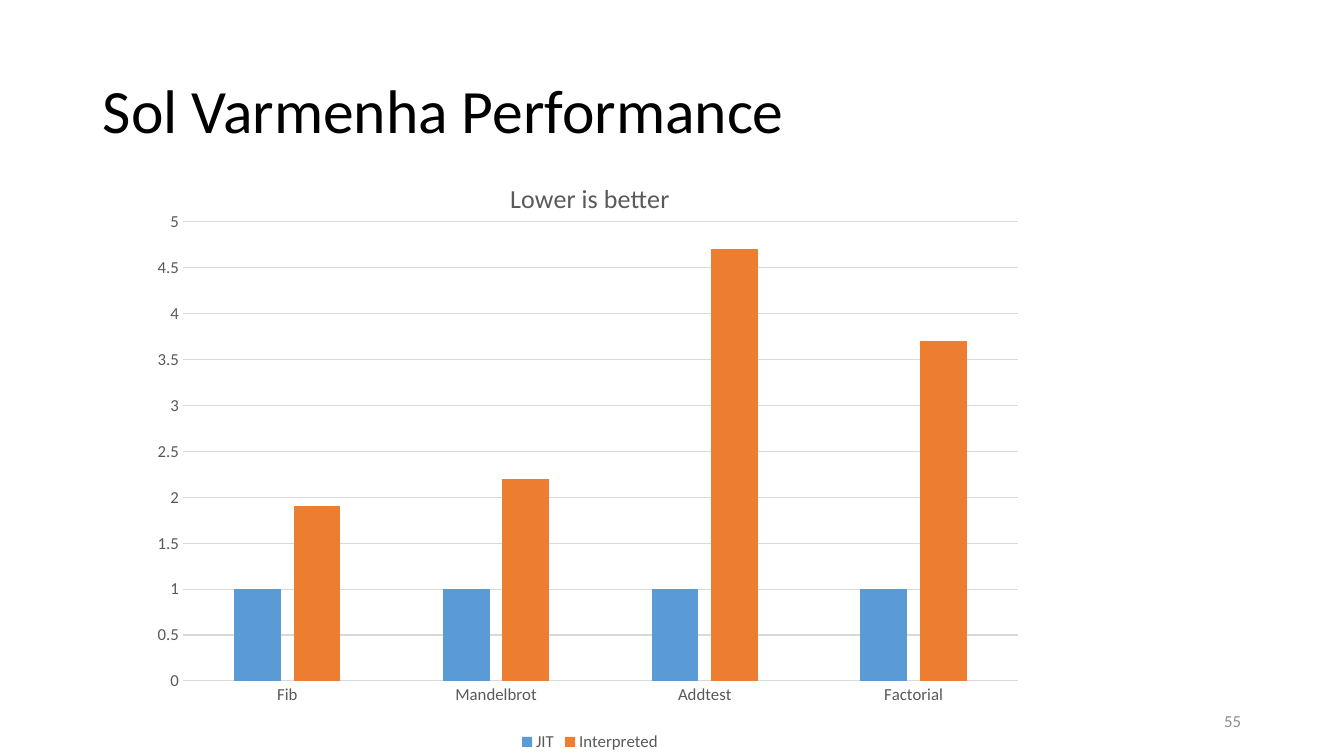
from lxml import etree
from pptx import Presentation
from pptx import util as u
from pptx.chart.data import CategoryChartData
from pptx.dml.color import RGBColor
from pptx.enum import chart as ch, text
from pptx.oxml.ns import qn

# Content; boxes are left, top, width, height in px
SIZE = (1344, 756)
TITLE = ("Sol Varmenha Performance", (93, 41, 1159, 146))
PAGE = ("55", (949, 701, 302, 40))
CHART = {
    "title": "Lower is better",
    "box": (142, 158, 896, 598),
    "cats": ["Fib", "Mandelbrot", "Addtest", "Factorial"],
    "series": {"JIT": [1, 1, 1, 1], "Interpreted": [1.9, 2.2, 4.7, 3.7]},
    "plot": (41, 64, 835, 459),
}


class Theme:
    font = "Calibri"
    ink, label, page, grid = "000000", "595959", "8C8C8C", "D9D9D9"
    bars = ["5B9BD5", "ED7D31"]
    head, sub, small = 44, 18.6, 12
    rule = 0.75


def px(n):
    return round(n * 914400 / 100.8)


def style(font, size, color):
    font.name, font.size, font.bold = Theme.font, u.Pt(size), False
    font.color.rgb = RGBColor.from_string(color)


def rule(line):
    line.width = u.Pt(Theme.rule)
    line.color.rgb = RGBColor.from_string(Theme.grid)


def write(slide, item, size, color, align, space=1.0):
    words, box = item
    frame = slide.shapes.add_textbox(*map(px, box)).text_frame
    frame.word_wrap = True
    frame.vertical_anchor = text.MSO_ANCHOR.MIDDLE
    para = frame.paragraphs[0]
    para.alignment, para.line_spacing = align, space
    run = para.add_run()
    run.text = words
    style(run.font, size, color)


def place(chart, box, plot):
    """Fix the inner plot area as fractions of the chart box."""
    area = chart.plots[0]._element.getparent()
    for old in area.findall(qn("c:layout")):
        area.remove(old)
    layout = etree.Element(qn("c:layout"))
    manual = etree.SubElement(layout, qn("c:manualLayout"))
    x, y, w, h = plot
    wide, high = box[2:]
    parts = [("layoutTarget", "inner"), ("xMode", "edge"), ("yMode", "edge"),
             ("x", x / wide), ("y", y / high),
             ("w", w / wide), ("h", h / high)]
    for tag, val in parts:
        etree.SubElement(manual, qn("c:" + tag)).set("val", str(val))
    area.insert(0, layout)


def draw(slide, info):
    data = CategoryChartData()
    data.categories = info["cats"]
    for name, vals in info["series"].items():
        data.add_series(name, vals)
    chart = slide.shapes.add_chart(
        ch.XL_CHART_TYPE.COLUMN_CLUSTERED, *map(px, info["box"]), data).chart
    style(chart.font, Theme.small, Theme.label)

    # Title and legend
    chart.has_title = True
    run = chart.chart_title.text_frame.paragraphs[0].add_run()
    run.text = info["title"]
    style(run.font, Theme.sub, Theme.label)
    chart.has_legend = True
    chart.legend.position = ch.XL_LEGEND_POSITION.BOTTOM
    chart.legend.include_in_layout = False
    style(chart.legend.font, Theme.small, Theme.label)

    # Bars
    plot = chart.plots[0]
    plot.gap_width, plot.overlap = 219, -27
    plot.vary_by_categories = False
    for bar, color in zip(plot.series, Theme.bars):
        bar.format.fill.solid()
        bar.format.fill.fore_color.rgb = RGBColor.from_string(color)

    # Axes
    cat, val = chart.category_axis, chart.value_axis
    for axis in (cat, val):
        axis.major_tick_mark = axis.minor_tick_mark = ch.XL_TICK_MARK.NONE
        style(axis.tick_labels.font, Theme.small, Theme.label)
    rule(cat.format.line)
    val.format.line.fill.background()
    val.minimum_scale, val.maximum_scale, val.major_unit = 0, 5, 0.5
    val.has_major_gridlines = True
    rule(val.major_gridlines.format.line)
    place(chart, info["box"], info["plot"])


def main():
    deck = Presentation()
    deck.slide_width, deck.slide_height = map(px, SIZE)
    slide = deck.slides.add_slide(deck.slide_layouts[6])
    write(slide, TITLE, Theme.head, Theme.ink, text.PP_ALIGN.LEFT, 0.9)
    write(slide, PAGE, Theme.small, Theme.page, text.PP_ALIGN.RIGHT)
    draw(slide, CHART)
    deck.save("out.pptx")


if __name__ == "__main__":
    main()
